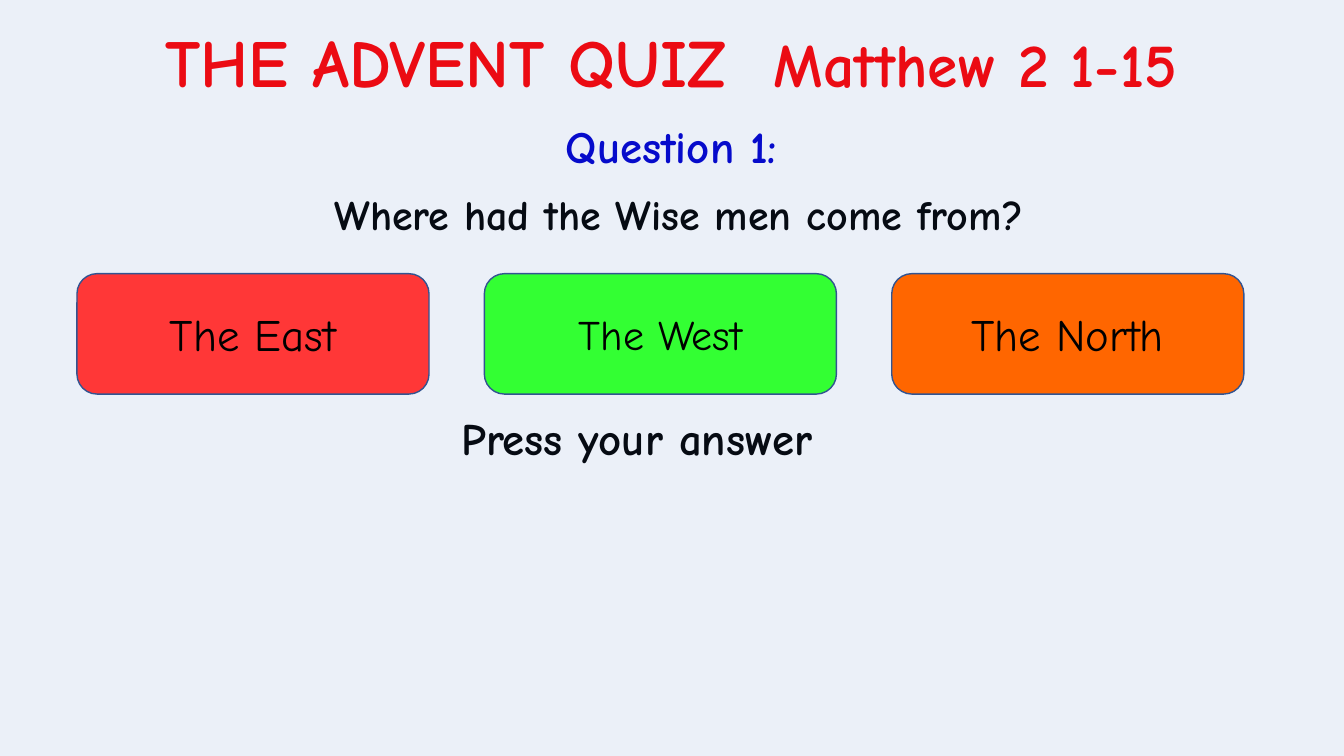
from lxml import etree
from pptx import Presentation
from pptx.dml.color import RGBColor
from pptx.enum.shapes import MSO_SHAPE
from pptx.enum.text import MSO_ANCHOR, MSO_AUTO_SIZE, PP_ALIGN
from pptx.oxml.ns import qn
from pptx.util import Pt

CENTER, LEFT = PP_ALIGN.CENTER, PP_ALIGN.LEFT
TOP, MIDDLE = MSO_ANCHOR.TOP, MSO_ANCHOR.MIDDLE
NO_AUTOFIT = MSO_AUTO_SIZE.NONE
RECT, ROUNDED = MSO_SHAPE.RECTANGLE, MSO_SHAPE.ROUNDED_RECTANGLE

FONT = "Comic Neue"
SLIDE_W, SLIDE_H = 960, 540
COLORS = {
    "title": "FF0000", "question": "0000CC", "text": "000000",
    "tint": "4472C4", "border": "325491",
    "red": "FF3737", "green": "33FF33", "orange": "FF6600",
}


def rgb(name):
    return RGBColor.from_string(COLORS[name])


def format_paragraph(p, color, size=None, bold=False, align=CENTER):
    p.alignment = align
    p.font.name = FONT
    p.font.bold = bold
    p.font.color.rgb = rgb(color)
    if size:
        p.font.size = Pt(size)


def set_title(slide, parts):
    """Fill the title placeholder with (text, size) runs."""
    sp = slide.shapes.title
    sp.left, sp.top, sp.width, sp.height = Pt(26.5), Pt(11), Pt(906), Pt(65.5)
    tf = sp.text_frame
    tf.auto_size = NO_AUTOFIT
    tf.word_wrap = False
    tf.vertical_anchor = TOP
    p = tf.paragraphs[0]
    format_paragraph(p, "title", bold=True)
    for text, size in parts:
        r = p.add_run()
        r.text = text
        r.font.size = Pt(size)


def add_text(slide, text, box, size, color="text", align=CENTER,
             line_spacing=None, space_before=0):
    sp = slide.shapes.add_textbox(*map(Pt, box))
    tf = sp.text_frame
    tf.word_wrap = True
    p = tf.paragraphs[0]
    p.text = text
    p.line_spacing = line_spacing
    p.space_before = Pt(space_before)
    format_paragraph(p, color, size, bold=True, align=align)


def add_box(slide, kind, box, fill):
    sp = slide.shapes.add_shape(kind, *map(Pt, box))
    sp.shadow.inherit = False
    sp.fill.solid()
    sp.fill.fore_color.rgb = rgb(fill)
    return sp


def add_tint(slide, opacity):
    """Lay a translucent veil over the whole slide."""
    sp = add_box(slide, RECT, (0, 0, SLIDE_W, SLIDE_H), "tint")
    sp.line.fill.background()
    color = sp.fill._xPr.find(qn("a:solidFill"))[0]
    etree.SubElement(color, qn("a:alpha"), val=str(opacity * 1000))


def add_answer(slide, text, box, size, fill):
    sp = add_box(slide, ROUNDED, box, fill)
    sp.line.color.rgb = rgb("border")
    sp.line.width = Pt(1)
    tf = sp.text_frame
    tf.vertical_anchor = MIDDLE
    p = tf.paragraphs[0]
    p.text = text
    format_paragraph(p, "text", size)


def main():
    prs = Presentation()
    prs.slide_width, prs.slide_height = Pt(SLIDE_W), Pt(SLIDE_H)
    slide = prs.slides.add_slide(prs.slide_layouts[5])

    # Heading and question
    set_title(slide, [("THE ADVENT QUIZ  ", 48), ("Matthew 2 1-15", 44)])
    add_text(slide, "Where had the Wise men come from?", (10, 137, 950, 52), 30,
             line_spacing=Pt(30), space_before=10)
    add_text(slide, "Press your answer", (322.5, 294.5, 484.5, 52), 32,
             align=LEFT, line_spacing=0.9, space_before=7.5)
    add_text(slide, "Question 1:", (321, 81.5, 317.5, 46), 32, "question")

    # Veil above the text, below the answers
    add_tint(slide, 10)

    # Answer buttons
    answers = [("The East", 32, "red"), ("The West", 30, "green"),
               ("The North", 32, "orange")]
    for i, (text, size, fill) in enumerate(answers):
        add_answer(slide, text, (55 + 291 * i, 195.5, 251.5, 86), size, fill)

    prs.save("out.pptx")


if __name__ == "__main__":
    main()
